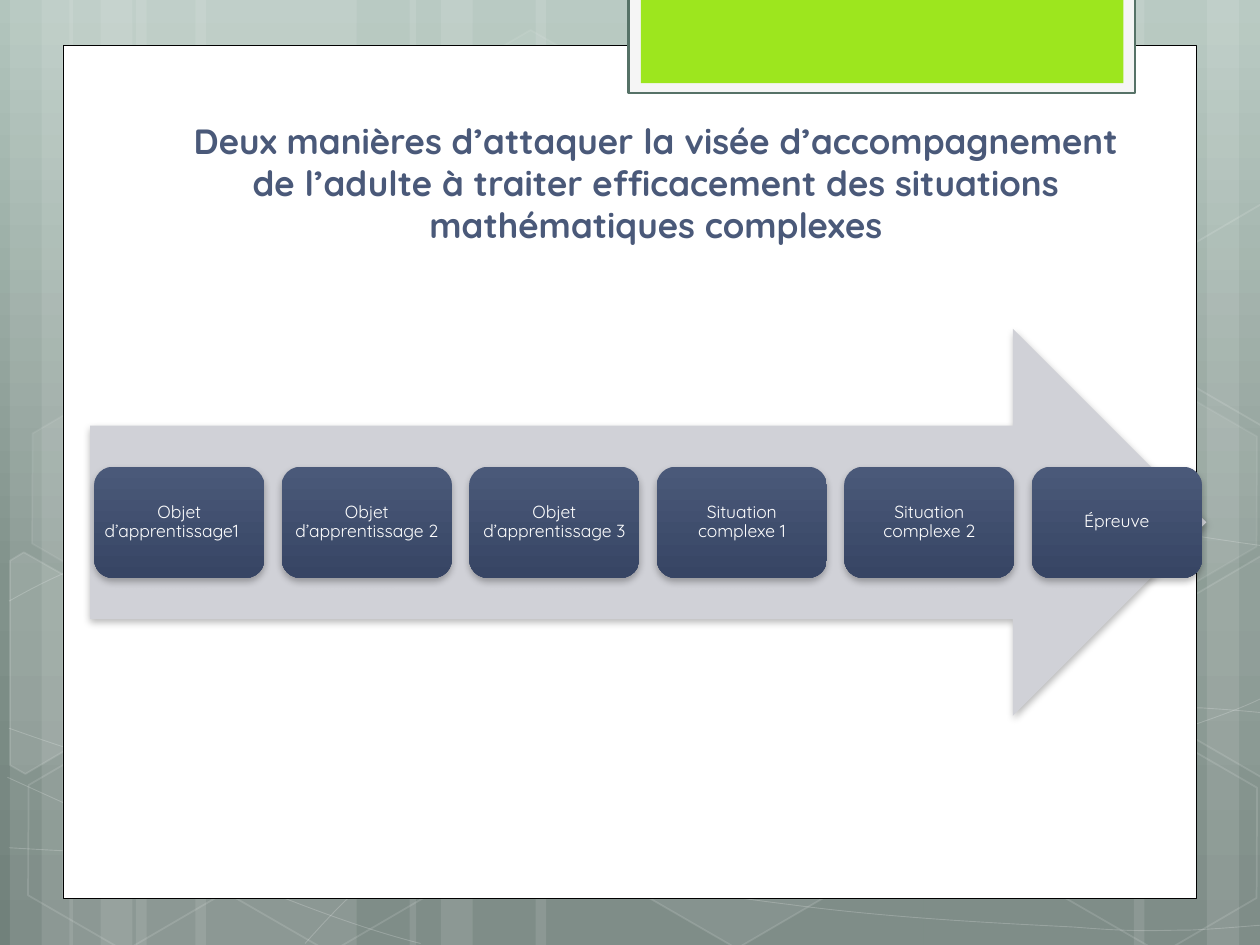
import pptx
import pptx.util
import pptx.dml.color
import pptx.enum.shapes
import pptx.enum.text
import pptx.oxml.ns
import lxml.etree
import math
from dataclasses import dataclass

Cm = pptx.util.Cm
Pt = pptx.util.Pt
Kind = pptx.enum.shapes.MSO_SHAPE
Text = pptx.enum.text
qn = pptx.oxml.ns.qn


@dataclass(frozen=True)
class Theme:
    font: str = "Quicksand"
    head: int = 20
    small: int = 10
    white: str = "FFFFFF"
    black: str = "000000"
    navy: str = "4A5979"
    arrow: str = "D0D1D7"
    frame: str = "F5F5F5"
    edge: str = "567267"
    lime: str = "9DE61E"
    sky: tuple = ((0, "B2C5BD"), (62, "81928B"), (100, "71817B"))
    box: tuple = ((0, "4A5979"), (100, "374564"))


THEME = Theme()
TILT = 30

STEPS = ["Objet d’apprentissage1\t", "Objet d’apprentissage 2",
         "Objet d’apprentissage 3", "Situation complexe 1",
         "Situation complexe 2", "Épreuve"]

WIDE, THIN, MID = 4.45, 1.27, 2.12
BARS = [(2.74, WIDE), (0.2, THIN), (0.84, MID),
        (3.94, WIDE), (1.4, THIN), (2.03, MID),
        (18.62, WIDE), (24.33, THIN), (22.86, MID),
        (10.8, 7.82), (8.26, THIN), (8.89, MID)]

CURVES = [
    [(0.18, 17.09), (1.55, 17.17), (2.92, 17.25), (4.83, 17.22),
     (6.73, 17.2), (9.09, 17.15), (11.63, 16.89),
     (14.17, 16.64), (17.78, 16.15), (20.12, 15.67),
     (22.43, 15.19), (24.82, 14.43), (25.58, 14)],
    [(0.18, 12.12), (0.91, 11.71), (1.65, 11.33), (3.07, 10.95),
     (4.52, 10.57), (6.58, 10.01), (8.81, 9.83),
     (11.07, 9.65), (13.82, 9.63), (16.61, 9.83),
     (19.41, 10.03), (24.05, 10.82), (25.58, 11.02)],
    [(0.15, 15.67), (3.23, 17.07), (6.27, 18.47), (8.48, 19.02)],
    [(0.18, 14.68), (0.97, 14.96), (1.78, 15.24), (3.25, 15.65),
     (4.72, 16.03), (6.93, 16.66), (9.07, 17.09),
     (11.18, 17.53), (13.84, 17.98), (15.95, 18.24),
     (18.06, 18.52), (20.32, 18.62), (21.67, 18.69),
     (22.99, 18.8), (23.34, 18.75), (24, 18.75),
     (24.66, 18.72), (25.12, 18.67), (25.58, 18.64)],
    [(6.15, 19.02), (6.6, 18.52), (7.06, 18.01), (7.67, 17.55),
     (8.28, 17.09), (9.14, 16.59), (9.86, 16.23),
     (10.57, 15.88), (11, 15.72), (11.94, 15.47),
     (12.85, 15.21), (14.55, 14.86), (15.44, 14.68),
     (16.36, 14.5), (16.48, 14.5), (17.27, 14.45),
     (18.06, 14.38), (19.3, 14.3), (20.17, 14.27),
     (21.06, 14.25), (22.5, 14.27), (22.5, 14.27),
     (22.5, 14.27), (24.21, 14.27), (24.21, 14.27),
     (24.66, 14.3), (25.1, 14.33), (25.55, 14.38)],
]

HEXES = [(8.48, 0.91, 4, 8), (12.62, 14.96, 6, 12), (0.28, 15.01, 0, 12),
         (0.36, 7.92, 7, 8), (4.42, 15.04, 0, 12), (19.13, 11.51, 10, 12),
         (21.18, 15.06, 0, 12), (21.18, 7.98, 7, 8)]

LEFT = [(0.2, 11.3), (0.48, 11.13), (2.44, 12.24),
        (2.41, 14.48), (0.51, 15.6), (0.2, 15.42)]
RIGHT = [(23.52, 12.32), (25.43, 11.2), (25.63, 11.33),
         (25.63, 15.57), (25.45, 15.67), (23.52, 14.55)]
CHIPS = [(LEFT, (0.91, 13.59), 10), (RIGHT, (25.02, 13.21), 4),
         ([(x, y - 7.09) for x, y in RIGHT], (25.02, 6.12), 0)]


def tint(fill, root, color, alpha=100):
    fill.solid()
    fill.fore_color.rgb = pptx.dml.color.RGBColor.from_string(color)
    if alpha < 100:
        node = root.find(".//" + qn("a:srgbClr"))
        lxml.etree.SubElement(node, qn("a:alpha"), val=str(alpha * 1000))


def blend(fill, root, stops):
    fill.gradient()
    fill.gradient_angle = 270
    bank = root.find(".//" + qn("a:gsLst"))
    bank.clear()
    for pos, color in stops:
        stop = lxml.etree.SubElement(bank, qn("a:gs"), pos=str(pos * 1000))
        lxml.etree.SubElement(stop, qn("a:srgbClr"), val=color)


def style(shape, color=None, alpha=100, line=None, width=1, haze=100):
    shape.shadow.inherit = False
    if color and alpha:
        tint(shape.fill, shape.element.spPr, color, alpha)
    else:
        shape.fill.background()
    if line:
        shape.line.width = Pt(width)
        tint(shape.line.fill, shape.element.spPr.find(qn("a:ln")), line, haze)
    else:
        shape.line.fill.background()
    return shape


def block(slide, kind, x, y, w, h, **look):
    shape = slide.shapes.add_shape(kind, Cm(x), Cm(y), Cm(w), Cm(h))
    return style(shape, **look)


def trace(slide, points, close, **look):
    spots = [(Cm(x), Cm(y)) for x, y in points]
    pen = slide.shapes.build_freeform(*spots[0])
    pen.add_line_segments(spots[1:], close=close)
    return style(pen.convert_to_shape(), **look)


def curve(slide, knots, **look):
    shape = trace(slide, knots, False, **look)
    legs = shape.element.findall(".//" + qn("a:lnTo"))
    for i in range(0, len(legs), 3):
        arc = lxml.etree.SubElement(legs[i].getparent(), qn("a:cubicBezTo"))
        for leg in legs[i:i + 3]:
            arc.append(leg[0])
            leg.getparent().remove(leg)


def turn(points, mid, angle):
    cos, sin = math.cos(math.radians(angle)), math.sin(math.radians(angle))
    gaps = [(x - mid[0], y - mid[1]) for x, y in points]
    return [(mid[0] + cos * x - sin * y, mid[1] + sin * x + cos * y)
            for x, y in gaps]


def shade(shape):
    effect = shape.element.spPr.find(qn("a:effectLst"))
    outer = lxml.etree.SubElement(
        effect, qn("a:outerShdw"), blurRad=str(Pt(4)), dist=str(Pt(2)),
        dir="5400000", algn="ctr", rotWithShape="0")
    color = lxml.etree.SubElement(outer, qn("a:srgbClr"), val=THEME.black)
    lxml.etree.SubElement(color, qn("a:alpha"), val="28000")


def write(frame, text, size, color, bold=False):
    frame.word_wrap = True
    para = frame.paragraphs[0]
    para.alignment = Text.PP_ALIGN.CENTER
    run = para.add_run()
    run.text = text
    run.font.name = THEME.font
    run.font.size = Pt(size)
    run.font.bold = bold
    run.font.color.rgb = pptx.dml.color.RGBColor.from_string(color)
    return para


def scene(slide):
    white = THEME.white
    blend(slide.background.fill, slide.element, THEME.sky)
    for x, w in BARS:
        block(slide, Kind.RECTANGLE, x, 0, w, 19.05, color=white, alpha=10)
    for knots in CURVES:
        curve(slide, knots, line=white, width=0.5, haze=20)
    for x, y, alpha, haze in HEXES:
        cell = block(slide, Kind.HEXAGON, x, y, 4.45, 3.86,
                     color=white, alpha=alpha, line=white, haze=haze)
        cell.adjustments[0] = 0.285
        cell.rotation = TILT
    for points, mid, alpha in CHIPS:
        chip = trace(slide, turn(points, mid, -TILT), True, color=white,
                     alpha=alpha, line=white, haze=12)
        chip.rotation = TILT
    block(slide, Kind.RECTANGLE, 1.27, 0.91, 22.86, 17.2,
          color=white, line=THEME.black, width=0.5)
    block(slide, Kind.RECTANGLE, 12.67, -0.05, 10.21, 1.93,
          color=THEME.frame, line=THEME.edge, width=1.25)
    block(slide, Kind.RECTANGLE, 12.92, -0.05, 9.73, 1.73, color=THEME.lime)


def title(slide, text):
    head = slide.shapes.title
    head.left, head.top, head.width, head.height = map(
        Cm, (3.47, 1.9, 19.51, 3.18))
    frame = head.text_frame
    frame.auto_size = Text.MSO_AUTO_SIZE.NONE
    frame.vertical_anchor = Text.MSO_ANCHOR.BOTTOM
    write(frame, text, THEME.head, THEME.navy, True)
    head.element.getparent().append(head.element)


def step(slide, x, text):
    box = block(slide, Kind.ROUNDED_RECTANGLE, x, 9.41, 3.43, 2.24)
    blend(box.fill, box.element.spPr, THEME.box)
    shade(box)
    frame = box.text_frame
    frame.margin_left = frame.margin_right = Cm(0.1)
    frame.margin_top = frame.margin_bottom = Cm(0.1)
    frame.vertical_anchor = Text.MSO_ANCHOR.MIDDLE
    write(frame, text, THEME.small, THEME.white).line_spacing = 0.9


def main():
    deck = pptx.Presentation()
    deck.slide_width, deck.slide_height = Cm(25.4), Cm(19.05)
    slide = deck.slides.add_slide(deck.slide_layouts[5])
    scene(slide)
    title(slide, "Deux manières d’attaquer la visée d’accompagnement de "
                 "l’adulte à traiter efficacement des situations "
                 "mathématiques complexes")
    shade(block(slide, Kind.RIGHT_ARROW, 1.82, 6.63, 22.5, 7.8,
                color=THEME.arrow))
    for i, text in enumerate(STEPS):
        step(slide, 1.9 + i * 3.78, text)
    deck.save("out.pptx")


if __name__ == "__main__":
    main()
